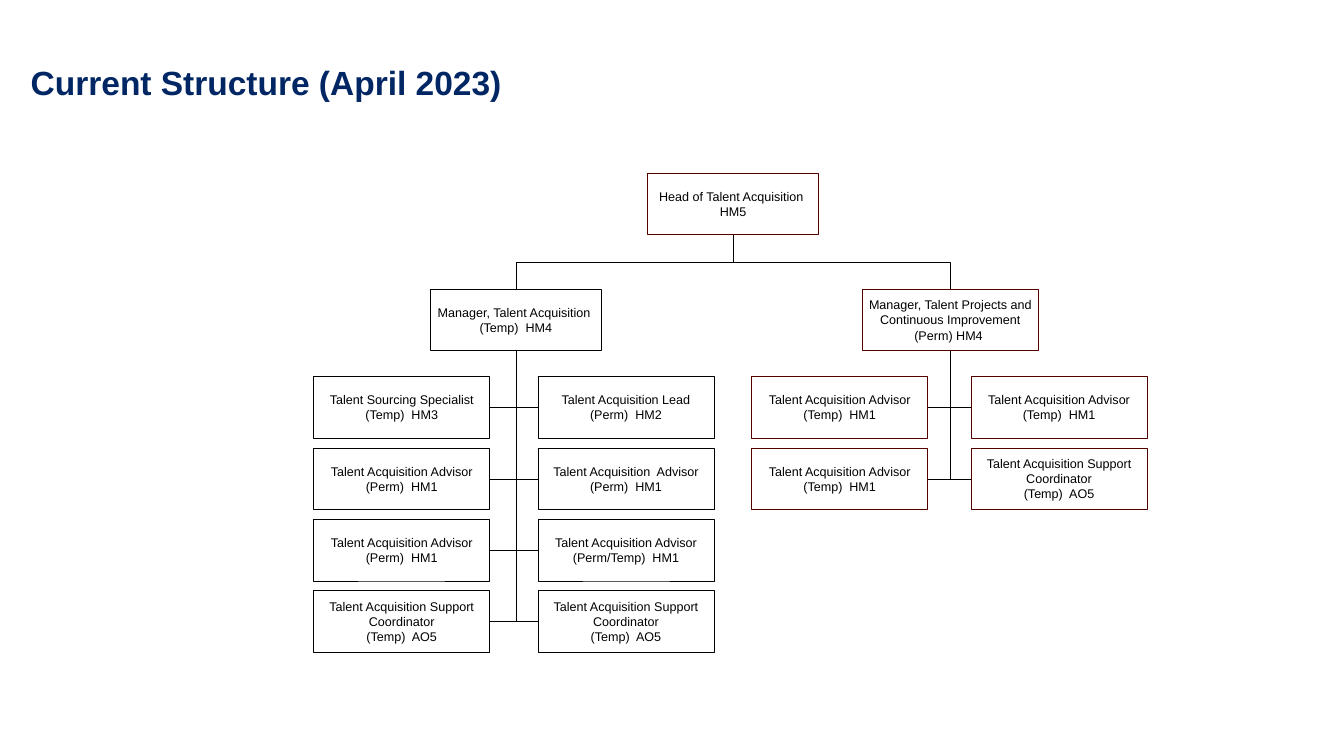
from dataclasses import dataclass

from pptx import Presentation
from pptx.dml.color import RGBColor
from pptx.enum import shapes, text
from pptx.oxml import xmlchemy
from pptx.oxml.ns import qn
from pptx.shapes import autoshape, connector
from pptx.slide import Slide
from pptx.util import Pt

NAVY = RGBColor(0x00, 0x26, 0x64)
BLACK = RGBColor(0x00, 0x00, 0x00)
MAROON = RGBColor(0x54, 0x00, 0x00)
WHITE = RGBColor(0xFF, 0xFF, 0xFF)

TOP, LEFT, BOTTOM, RIGHT = range(4)
POST_HEIGHT = 88.56
MANAGER_TOP = 414
STAFF_TOP = 539.3
STAFF_STEP = 102.2
STAFF_WIDTH = 252
LEAD_WIDTH = 244.8

TITLE_FRAME = {"left": Pt(43.9), "top": Pt(95), "width": Pt(1803.6), "height": Pt(53.3)}
TITLE_MARGINS = {"margin_left": 0, "margin_top": 0, "margin_right": 0, "margin_bottom": 0}
TITLE_FONT = {"name": "Arial", "size": Pt(48), "bold": True}
POST_FONT = {"name": "Arial", "size": Pt(18)}


@dataclass(frozen=True)
class Post:
    role: str
    grade: str
    left: float
    top: float
    width: float
    outline: RGBColor


@dataclass(frozen=True)
class Bend:
    preset: str
    rot: float
    flipH: bool
    flipV: bool


@dataclass(frozen=True)
class Team:
    manager: Post
    columns: tuple[float, float]
    staff: tuple[tuple[tuple[str, str], tuple[str, str]], ...]
    to_head: Bend


TO_LEFT = Bend("bentConnector2", 90, False, False)
TO_RIGHT = Bend("bentConnector2", 270, True, False)

HEAD = Post("Head of Talent Acquisition ", "HM5", 927.4, 247.7, LEAD_WIDTH, MAROON)
ADVISOR = "Talent Acquisition Advisor"
COORDINATOR = "Talent Acquisition Support Coordinator"
TEAMS = (
    Team(
        Post("Manager, Talent Acquisition ", "(Temp)  HM4", 616.3, MANAGER_TOP, LEAD_WIDTH, BLACK),
        (449.3, 770.4),
        (
            (("Talent Sourcing Specialist", "(Temp)  HM3"), ("Talent Acquisition Lead", "(Perm)  HM2")),
            ((ADVISOR, "(Perm)  HM1"), ("Talent Acquisition  Advisor", "(Perm)  HM1")),
            ((ADVISOR, "(Perm)  HM1"), (ADVISOR, "(Perm/Temp)  HM1")),
            (("Talent Acquisition Support Coordinator", "(Temp)  AO5"), (COORDINATOR, "(Temp)  AO5")),
        ),
        Bend("bentConnector3", 90, True, True),
    ),
    Team(
        Post("Manager, Talent Projects and Continuous Improvement", "(Perm) HM4 ",
             1234.8, MANAGER_TOP, STAFF_WIDTH, MAROON),
        (1076.4, 1390.6),
        (
            ((ADVISOR, "(Temp)  HM1"), (ADVISOR, "(Temp)  HM1")),
            ((ADVISOR, "(Temp)  HM1"), (COORDINATOR, "(Temp)  AO5")),
        ),
        Bend("bentConnector3", 270, False, True),
    ),
)


def apply(target: object, values: dict) -> None:
    for key, value in values.items():
        setattr(target, key, value)


def write_title(slide: Slide, wording: str) -> None:
    title = slide.shapes.title
    apply(title, TITLE_FRAME)
    apply(title.text_frame, TITLE_MARGINS)
    title.text_frame.text = wording
    paragraph = title.text_frame.paragraphs[0]
    apply(paragraph, {"alignment": text.PP_ALIGN.LEFT, "line_spacing": 0.9})
    apply(paragraph.font, TITLE_FONT)
    paragraph.font.color.rgb = NAVY


def draw_post(slide: Slide, post: Post) -> autoshape.Shape:
    box = slide.shapes.add_shape(
        shapes.MSO_SHAPE.RECTANGLE,
        Pt(post.left), Pt(post.top), Pt(post.width), Pt(POST_HEIGHT),
    )
    box.shadow.inherit = False
    box.fill.solid()
    box.fill.fore_color.rgb = WHITE
    box.line.color.rgb = post.outline
    box.line.width = Pt(1)
    frame = box.text_frame
    apply(frame, {"word_wrap": True, "vertical_anchor": text.MSO_ANCHOR.MIDDLE})
    frame.text = f"{post.role}\n{post.grade}"
    for paragraph in frame.paragraphs:
        paragraph.alignment = text.PP_ALIGN.CENTER
        apply(paragraph.font, POST_FONT)
        paragraph.font.color.rgb = BLACK
    return box


def draw_elbow(slide: Slide, start: autoshape.Shape, start_side: int,
               end: autoshape.Shape, end_side: int, bend: Bend) -> connector.Connector:
    link = slide.shapes.add_connector(shapes.MSO_CONNECTOR.ELBOW, 0, 0, 0, 0)
    link.begin_connect(start, start_side)
    link.end_connect(end, end_side)
    middle_x = (link.begin_x + link.end_x) // 2
    middle_y = (link.begin_y + link.end_y) // 2
    length = abs(link.end_y - link.begin_y)
    depth = abs(link.end_x - link.begin_x)
    apply(link, {
        "left": middle_x - length // 2, "top": middle_y - depth // 2,
        "width": length, "height": depth,
    })
    properties = link._element.spPr
    apply(properties.xfrm, {"rot": bend.rot, "flipH": bend.flipH, "flipV": bend.flipV})
    properties.find(qn("a:prstGeom")).set("prst", bend.preset)
    link.line.color.rgb = BLACK
    link.line.width = Pt(0.5)
    properties.append(xmlchemy.OxmlElement("a:effectLst"))
    return link


def draw_team(slide: Slide, team: Team, head: autoshape.Shape) -> None:
    manager = draw_post(slide, team.manager)
    sides = ((RIGHT, TO_LEFT), (LEFT, TO_RIGHT))
    for row, pair in enumerate(team.staff):
        for (role, grade), left, (side, bend) in zip(pair, team.columns, sides):
            top = STAFF_TOP + row * STAFF_STEP
            member = draw_post(slide, Post(role, grade, left, top, STAFF_WIDTH, team.manager.outline))
            draw_elbow(slide, manager, BOTTOM, member, side, bend)
    draw_elbow(slide, manager, TOP, head, BOTTOM, team.to_head)


def main() -> None:
    deck = Presentation()
    apply(deck, {"slide_width": Pt(1924.56), "slide_height": Pt(1080)})
    slide = deck.slides.add_slide(deck.slide_layouts[5])
    write_title(slide, "Current Structure (April 2023)")
    head = draw_post(slide, HEAD)
    for team in TEAMS:
        draw_team(slide, team, head)
    deck.save("out.pptx")


if __name__ == "__main__":
    main()
